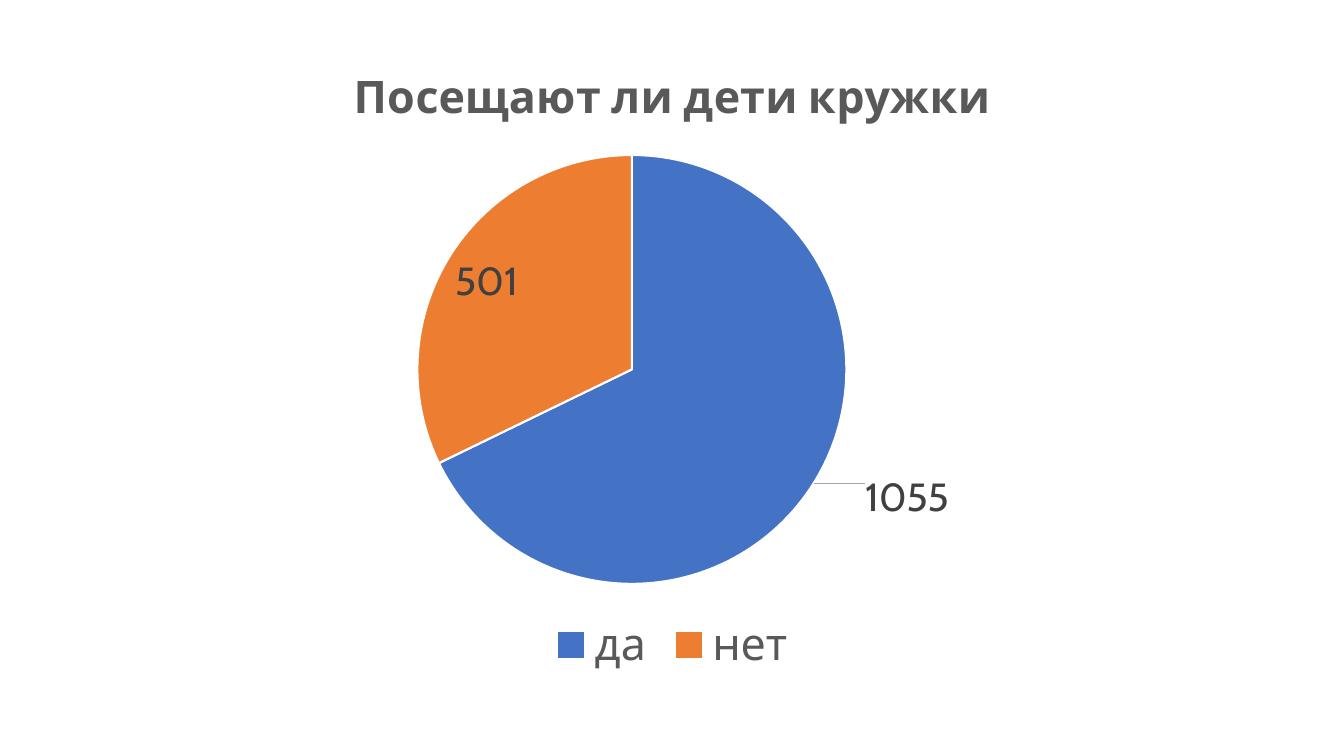
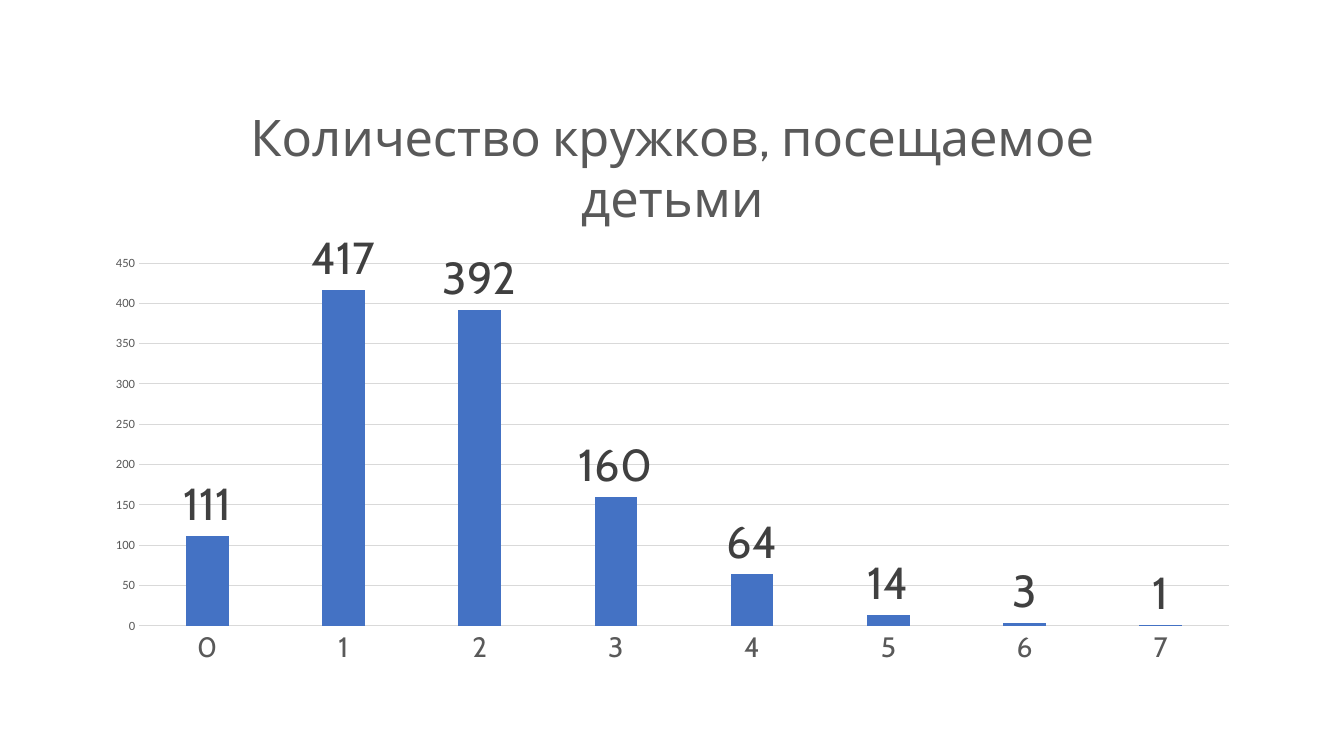
from lxml import etree
from pptx import Presentation
from pptx.chart.data import CategoryChartData
from pptx.dml.color import RGBColor
from pptx.enum.chart import XL_CHART_TYPE, XL_LABEL_POSITION, XL_LEGEND_POSITION, XL_TICK_MARK
from pptx.oxml import parse_xml
from pptx.oxml.ns import nsdecls, qn
from pptx.util import Inches, Pt

BLUE, ORANGE, WHITE = "4472C4", "ED7D31", "FFFFFF"
GREY, DARK, PALE, LEADER = "595959", "404040", "D9D9D9", "A6A6A6"


def rgb(value):
    """Turn a hex string into a colour."""
    return RGBColor.from_string(value)


def make_layout(inner=False, **fractions):
    """Build a manual chart layout from fractions of the chart size."""
    layout = parse_xml(f"<c:layout {nsdecls('c')}><c:manualLayout/></c:layout>")
    settings = {}
    if inner:
        settings = {"layoutTarget": "inner", "xMode": "edge", "yMode": "edge"}
    for name, value in {**settings, **fractions}.items():
        etree.SubElement(layout[0], qn(f"c:{name}")).set("val", str(value))
    return layout


class Deck:
    """Hold the chart style and the current slide."""

    def __init__(self):
        """Start a wide presentation."""
        self.prs = Presentation()
        self.prs.slide_width, self.prs.slide_height = Inches(13.33), Inches(7.5)
        self.slide = None

    def add_slide(self):
        """Add a blank slide with a white background."""
        self.slide = self.prs.slides.add_slide(self.prs.slide_layouts[6])
        fill = self.slide.background.fill
        fill.solid()
        fill.fore_color.rgb = rgb(WHITE)

    def style(self, font, size, color=GREY, name="Cabin", bold=False):
        """Format a font."""
        font.size, font.name, font.bold = Pt(size), name, bold
        font.color.rgb = rgb(color)

    def chart(self, kind, box, title, title_size, values, plot_box, bold=False):
        """Add a titled chart with one series and a fixed plot area."""
        data = CategoryChartData()
        data.categories = list(values)
        data.add_series("Series 1", list(values.values()))
        chart = self.slide.shapes.add_chart(kind, *map(Inches, box), data).chart
        self.style(chart.font, 10, "000000", "Calibri")
        chart.has_title = True
        p = chart.chart_title.text_frame.paragraphs[0]
        p.text = title
        self.style(p.runs[0].font, title_size, bold=bold)
        chart.has_legend = False
        area = chart._chartSpace.chart.plotArea
        for old in area.findall(qn("c:layout")):
            area.remove(old)
        area.insert(0, make_layout(True, **dict(zip("xywh", plot_box))))
        return chart

    def labels(self, labels, size, position):
        """Show values as data labels."""
        labels.show_value = True
        labels.position = position
        self.style(labels.font, size, DARK)

    def pie(self, box, title, values, colors, plot_box):
        """Add a pie chart with a legend and a leader line."""
        chart = self.chart(XL_CHART_TYPE.PIE, box, title, 32, values, plot_box, True)
        chart.has_legend = True
        chart.legend.position = XL_LEGEND_POSITION.BOTTOM
        chart.legend.include_in_layout = False
        self.style(chart.legend.font, 32)
        series = chart.plots[0].series[0]
        for i, color in enumerate(colors):
            fmt = series.points[i].format
            fmt.fill.solid()
            fmt.fill.fore_color.rgb = rgb(color)
            fmt.line.color.rgb = rgb(WHITE)
            fmt.line.width = Pt(1.5)
        self.labels(series.data_labels, 28, XL_LABEL_POSITION.BEST_FIT)
        label = series.points[0].data_label
        self.style(label.font, 28, DARK)
        label.position = XL_LABEL_POSITION.BEST_FIT
        labels = series._element.find(qn("c:dLbls"))
        labels.find(qn("c:dLbl")).insert(1, make_layout(x=0.04, y=-0.02))
        leader = labels.find(qn("c:showLeaderLines"))
        if leader is None:
            leader = etree.SubElement(labels, qn("c:showLeaderLines"))
        leader.set("val", "1")
        leader.addnext(parse_xml(
            f'<c:leaderLines {nsdecls("c", "a")}><c:spPr><a:ln w="9525"><a:solidFill>'
            f'<a:srgbClr val="{LEADER}"/></a:solidFill></a:ln></c:spPr></c:leaderLines>'))

    def columns(self, box, title, values, plot_box):
        """Add a column chart with value labels and a grid."""
        chart = self.chart(XL_CHART_TYPE.COLUMN_CLUSTERED, box, title, 36, values, plot_box)
        plot = chart.plots[0]
        plot.gap_width, plot.overlap, plot.vary_by_categories = 219, -27, False
        series = plot.series[0]
        series.format.fill.solid()
        series.format.fill.fore_color.rgb = rgb(BLUE)
        self.labels(series.data_labels, 32, XL_LABEL_POSITION.OUTSIDE_END)
        cat, val = chart.category_axis, chart.value_axis
        for axis in (cat, val):
            axis.major_tick_mark = axis.minor_tick_mark = XL_TICK_MARK.NONE
        self.style(cat.tick_labels.font, 20)
        self.style(val.tick_labels.font, 9, name="Calibri")
        val.minimum_scale, val.maximum_scale, val.major_unit = 0, 450, 50
        val.has_major_gridlines = True
        val.format.line.fill.background()
        for line in (cat.format.line, val.major_gridlines.format.line):
            line.color.rgb = rgb(PALE)
            line.width = Pt(0.75)


def main():
    """Build and save both slides."""
    deck = Deck()
    deck.add_slide()
    deck.pie((0.92, 0.38, 11.5, 6.38), "Посещают ли дети кружки",
             {"да": 1055, "нет": 501}, (BLUE, ORANGE), (0.28, 0.18, 0.37, 0.67))
    deck.add_slide()
    counts = (111, 417, 392, 160, 64, 14, 3, 1)
    deck.columns((0.92, 0.75, 11.5, 6), "Количество кружков, посещаемое детьми",
                 {str(i): count for i, count in enumerate(counts)},
                 (0.04, 0.31, 0.94, 0.6))
    deck.prs.save("out.pptx")


if __name__ == "__main__":
    main()
